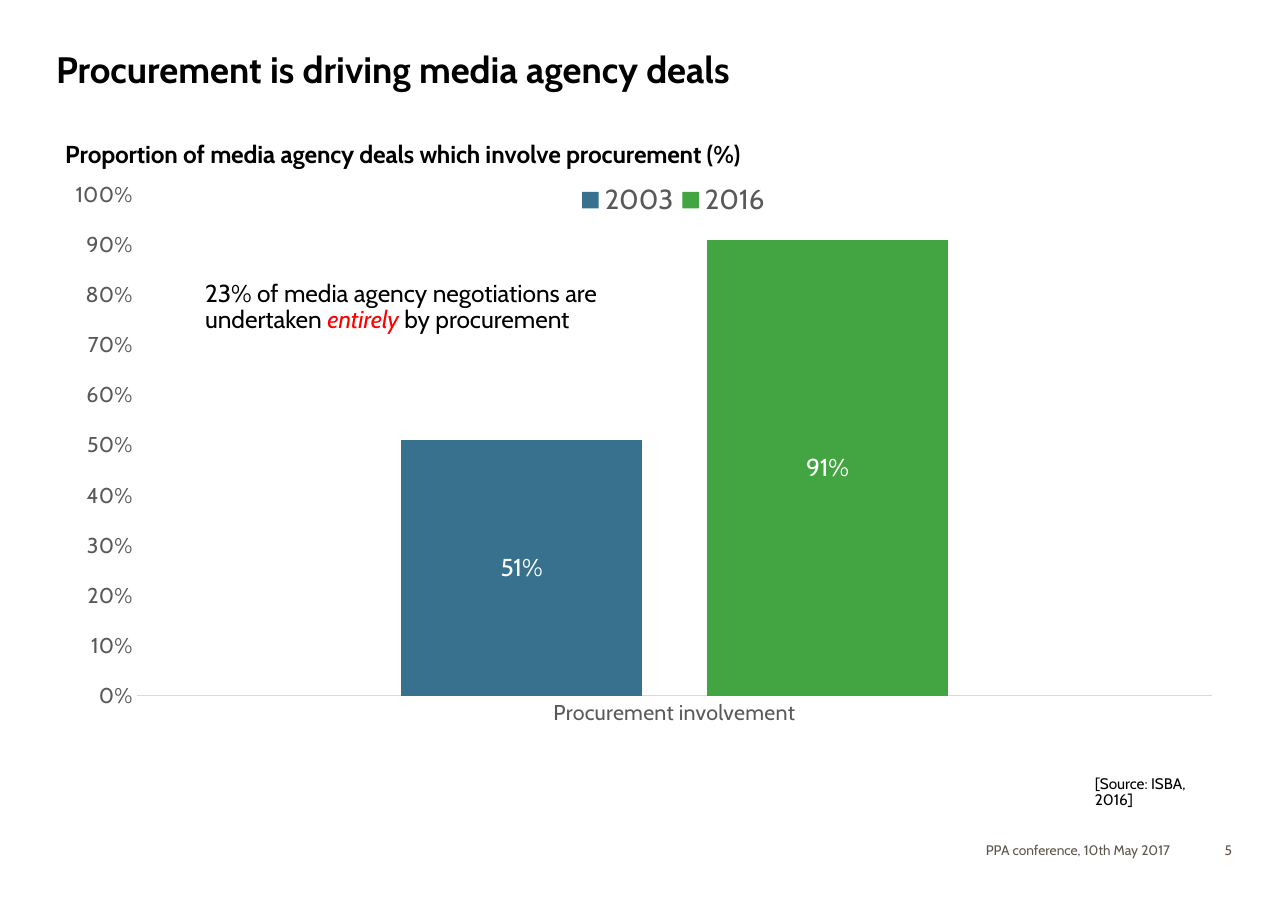
from pptx import Presentation
from pptx.chart.data import CategoryChartData
from pptx.dml.color import RGBColor
from pptx.enum.chart import XL_CHART_TYPE, XL_LABEL_POSITION, XL_LEGEND_POSITION, XL_TICK_MARK
from pptx.enum.text import MSO_ANCHOR, PP_ALIGN
from pptx.oxml import parse_xml
from pptx.oxml.ns import nsdecls, qn
from pptx.util import Pt

PX = 914400 / 110.2
FONT = "Cabin"
BLACK, GREY, BROWN, RED, WHITE = "000000", "595959", "60554A", "FF0000", "FFFFFF"
COLUMN = XL_CHART_TYPE.COLUMN_CLUSTERED
NO_TICK = XL_TICK_MARK.NONE
CENTER = XL_LABEL_POSITION.CENTER
BOTTOM = XL_LEGEND_POSITION.BOTTOM
TOP = MSO_ANCHOR.TOP
LEFT, RIGHT = PP_ALIGN.LEFT, PP_ALIGN.RIGHT


def px(n):
    return round(n * PX)


def rgb(value):
    return RGBColor.from_string(value)


def style(font, size, color, bold=False, italic=False):
    font.name = FONT
    font.size = Pt(size)
    font.bold = bold
    font.italic = italic
    font.color.rgb = rgb(color)


def set_margins(tf, left, top, right, bottom):
    tf.margin_left, tf.margin_top = px(left), px(top)
    tf.margin_right, tf.margin_bottom = px(right), px(bottom)


def add_title(s, x, y, w, h, text):
    sp = s.shapes.title
    sp.left, sp.top, sp.width, sp.height = px(x), px(y), px(w), px(h)
    tf = sp.text_frame
    tf.text = text
    tf.vertical_anchor = TOP
    set_margins(tf, 0, 0, 14, 7)
    p = tf.paragraphs[0]
    p.alignment = LEFT
    style(p.runs[0].font, 24, BLACK, bold=True)


def add_text(s, x, y, w, h, parts, size, align=LEFT, margins=(11, 6, 11, 6), spacing=None):
    tf = s.shapes.add_textbox(px(x), px(y), px(w), px(h)).text_frame
    tf.word_wrap = True
    tf.vertical_anchor = TOP
    set_margins(tf, *margins)
    p = tf.paragraphs[0]
    p.alignment = align
    p.line_spacing = spacing
    for text, color, italic in parts:
        r = p.add_run()
        r.text = text
        style(r.font, size, color, italic=italic)


def add_footer(s, x, y, w, h, text, number):
    for right, part in ((x + w - 62, text), (x + w, number)):
        add_text(s, x, y, right - x, h, [(part, BROWN, False)], 9, RIGHT, (0, 0, 0, 0))


def set_layout(el, index, x, y, w=None, h=None):
    for old in el.findall(qn("c:layout")):
        el.remove(old)
    target = '<c:layoutTarget val="inner"/>' if el.tag == qn("c:plotArea") else ""
    sizes = "".join(f'<c:{k} val="{v}"/>' for k, v in (("w", w), ("h", h)) if v)
    el.insert(index, parse_xml(
        f'<c:layout {nsdecls("c")}><c:manualLayout>{target}'
        '<c:xMode val="edge"/><c:yMode val="edge"/>'
        f'<c:x val="{x}"/><c:y val="{y}"/>{sizes}</c:manualLayout></c:layout>'))


def add_procurement_chart(s, x, y, w, h):
    data = CategoryChartData(number_format="0%")
    data.categories = ["Procurement involvement"]
    data.add_series("2003", [0.51])
    data.add_series("2016", [0.91])
    chart = s.shapes.add_chart(COLUMN, px(x), px(y), px(w), px(h), data).chart
    style(chart.font, 14, BLACK)

    chart.has_title = True
    tf = chart.chart_title.text_frame
    tf.text = "Proportion of media agency deals which involve procurement (%)"
    style(tf.paragraphs[0].runs[0].font, 16, BLACK, bold=True)

    chart.has_legend = True
    legend = chart.legend
    legend.position = BOTTOM
    legend.include_in_layout = False
    style(legend.font, 18, GREY)

    for axis in (chart.category_axis, chart.value_axis):
        axis.major_tick_mark = axis.minor_tick_mark = NO_TICK
        axis.has_major_gridlines = False
        style(axis.tick_labels.font, 14, GREY)
    line = chart.category_axis.format.line
    line.color.rgb = rgb("D9D9D9")
    line.width = Pt(0.75)
    axis = chart.value_axis
    axis.minimum_scale, axis.maximum_scale, axis.major_unit = 0, 1, 0.1
    axis.tick_labels.number_format = "0%"
    axis.tick_labels.number_format_is_linked = False
    axis.format.line.fill.background()

    plot = chart.plots[0]
    plot.gap_width, plot.overlap = 219, -27
    plot.vary_by_categories = False
    for series, color in zip(plot.series, ("38718E", "42A542")):
        series.format.fill.solid()
        series.format.fill.fore_color.rgb = rgb(color)
        labels = series.data_labels
        labels.show_value = True
        labels.number_format = "0%"
        labels.number_format_is_linked = False
        labels.position = CENTER
        style(labels.font, 16, WHITE)

    set_layout(chart.chart_title._element, 1, 0.004, 0.01)
    set_layout(legend._element, 1, 0.44, 0.08, 0.17, 0.05)
    set_layout(chart._chartSpace.chart.plotArea, 0, 0.069, 0.098, 0.914, 0.708)


def main():
    prs = Presentation()
    prs.slide_width, prs.slide_height = px(1288), px(911)
    s = prs.slides.add_slide(prs.slide_layouts[5])
    add_title(s, 56, 47, 1176, 77, "Procurement is driving media agency deals")
    add_footer(s, 446, 842, 786, 43, "PPA conference, 10th May 2017", "5")
    add_procurement_chart(s, 56, 126, 1176, 707)
    add_text(s, 1084, 770, 130, 28, [("[Source: ISBA, 2016]", BLACK, False)], 10, spacing=0.9)
    add_text(s, 194, 275, 426, 65, [
        ("23% of media agency negotiations are undertaken ", BLACK, False),
        ("entirely ", RED, True),
        ("by procurement", BLACK, False),
    ], 16, spacing=0.9)
    prs.save("out.pptx")


if __name__ == "__main__":
    main()
